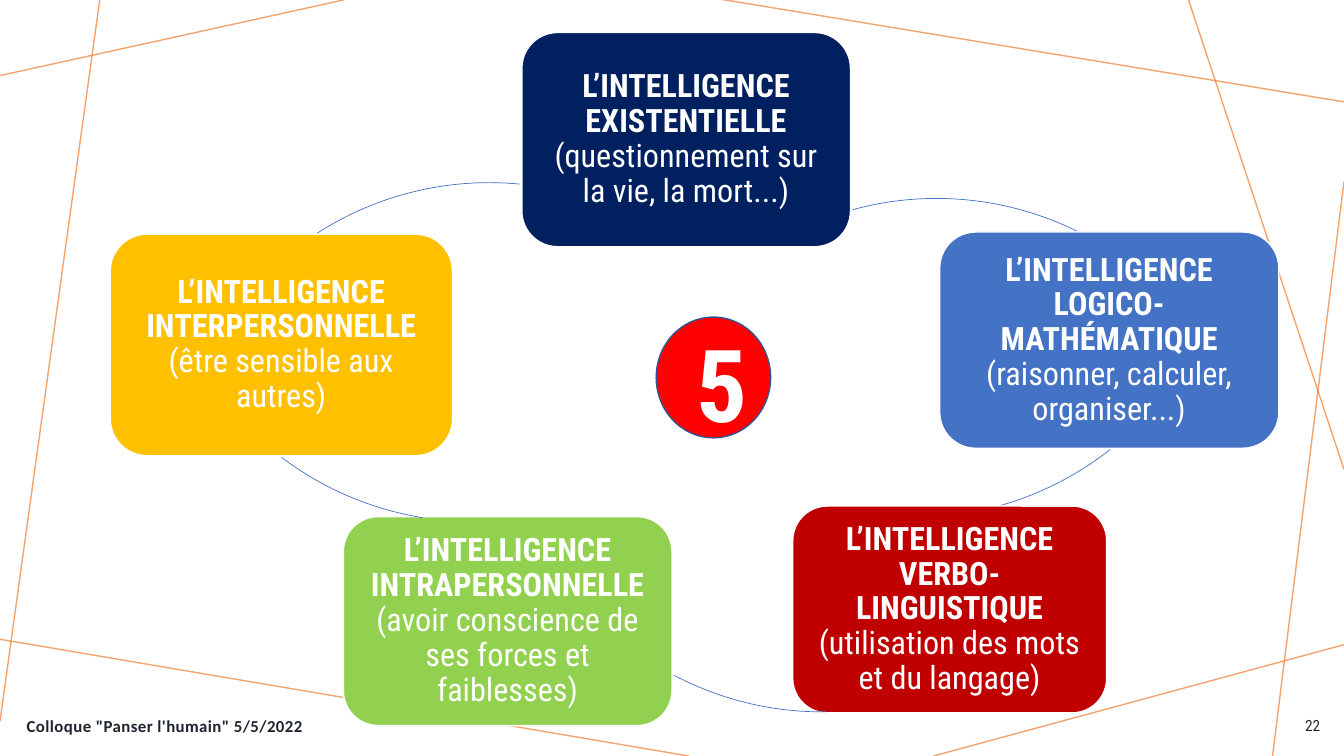
from lxml.etree import SubElement
from pptx import Presentation
from pptx.dml.color import RGBColor
from pptx.enum.shapes import MSO_CONNECTOR, MSO_SHAPE
from pptx.enum.text import MSO_ANCHOR, PP_ALIGN
from pptx.oxml.ns import qn
from pptx.util import Pt

PX = 9525  # 96 px to the inch
COLORS = {
    "white": "FFFFFF", "ink": "1D242E", "orange": "ED7D31", "navy": "002060",
    "blue": "4472C4", "crimson": "C00000", "green": "92D050",
    "yellow": "FFC000", "red": "FF0000", "outline": "325491",
}
FONT = "Roboto Condensed"


def add_run(paragraph, text, size, color, bold=False, font=FONT):
    run = paragraph.add_run()
    run.text = text
    run.font.size = Pt(size)
    run.font.name = font
    run.font.bold = bold
    run.font.color.rgb = RGBColor.from_string(COLORS[color])
    return run


def add_shape(kind, box, fill, line, width):
    shape = slide.shapes.add_shape(kind, *[value * PX for value in box])
    shape.shadow.inherit = False
    if fill:
        shape.fill.solid()
        shape.fill.fore_color.rgb = RGBColor.from_string(COLORS[fill])
    else:
        shape.fill.background()
    shape.line.color.rgb = RGBColor.from_string(COLORS[line])
    shape.line.width = Pt(width)
    return shape


presentation = Presentation()
presentation.slide_width = 1280 * PX
presentation.slide_height = 720 * PX
slide = presentation.slides.add_slide(presentation.slide_layouts[6])

# Crossing background lines
background_lines = [
    (327, 0, 0, 72), (95, 0, 0, 687), (656, 720, -5, 608),
    (1280, 614, 889, 720), (1280, 173, 1212, 720),
    (1280, 447, 1132, 0), (1280, 97, 685, -1),
]
for ends in background_lines:
    connector = slide.shapes.add_connector(
        MSO_CONNECTOR.STRAIGHT, *[value * PX for value in ends])
    connector.line.color.rgb = RGBColor.from_string(COLORS["orange"])
    connector.line.width = Pt(1)
    properties = connector._element.spPr
    SubElement(properties, qn("a:effectLst"))
    color_element = next(properties.iter(qn("a:srgbClr")))
    SubElement(color_element, qn("a:alpha")).set("val", "70000")

# Cycle of intelligences: box, fill, title, detail, then the arc that follows
# (left and top of its circle, start and end angle in degrees)
ARC_SIZE = 606
intelligences = [
    ((497, 31, 313, 204), "navy", "L’INTELLIGENCE EXISTENTIELLE ",
     "(questionnement sur la vie, la mort...)", (589, 189, 254.7, 296.2)),
    ((895, 221, 323, 206), "blue", "L’INTELLIGENCE LOGICO-MATHÉMATIQUE ",
     "(raisonner, calculer, organiser...)", (567, -113, 51.8, 74.1)),
    ((755, 482, 299, 197), "crimson", "L’INTELLIGENCE VERBO-LINGUISTIQUE ",
     "(utilisation des mots et du langage)", (480, 72, 89.2, 117.8)),
    ((327, 492, 313, 199), "green", "L’INTELLIGENCE INTRAPERSONNELLE ",
     "(avoir conscience de ses forces et faiblesses)", (148, -109, 99.2, 127.1)),
    ((105, 223, 326, 211), "yellow", "L’INTELLIGENCE INTERPERSONNELLE ",
     "(être sensible aux autres)", (163, 174, 237.3, 275.5)),
]
for box, fill, title, detail, (left, top, start, end) in intelligences:
    card = add_shape(MSO_SHAPE.ROUNDED_RECTANGLE, box, fill, "white", 1)
    frame = card.text_frame
    frame.word_wrap = True
    frame.vertical_anchor = MSO_ANCHOR.MIDDLE
    frame.margin_left = frame.margin_right = 9 * PX
    frame.margin_top = frame.margin_bottom = 9 * PX
    paragraph = frame.paragraphs[0]
    paragraph.alignment = PP_ALIGN.CENTER
    paragraph.line_spacing = 0.9
    add_run(paragraph, title, 23, "white", bold=True)
    add_run(paragraph, detail, 23, "white")

    arc = add_shape(MSO_SHAPE.ARC, (left, top, ARC_SIZE, ARC_SIZE),
                    None, "blue", 0.5)
    # Angles count 60000 to the degree, adjustments 100000 to the unit
    arc.adjustments[0] = start * 0.6
    arc.adjustments[1] = end * 0.6

# Central disc
add_shape(MSO_SHAPE.OVAL, (625, 302, 109, 115), "red", "outline", 1)

# Footer, page number and central figure
labels = [
    ((16, 672, 472, 38), 'Colloque "Panser l\'humain" 5/5/2022', 12, "ink",
     True, "Calibri", PP_ALIGN.LEFT, MSO_ANCHOR.MIDDLE, 30),
    ((1218, 672, 49, 38), "22", 11, "ink",
     False, FONT, PP_ALIGN.RIGHT, MSO_ANCHOR.MIDDLE, 0),
    ((654, 302, 63, 126), "5", 72, "white",
     True, FONT, PP_ALIGN.LEFT, MSO_ANCHOR.TOP, 0),
]
for box, text, size, color, bold, font, alignment, anchor, spacing in labels:
    label = slide.shapes.add_textbox(*[value * PX for value in box])
    frame = label.text_frame
    frame.word_wrap = True
    frame.vertical_anchor = anchor
    paragraph = frame.paragraphs[0]
    paragraph.alignment = alignment
    run = add_run(paragraph, text, size, color, bold, font)
    if spacing:
        run.font._element.set("spc", str(spacing))

presentation.save("out.pptx")
